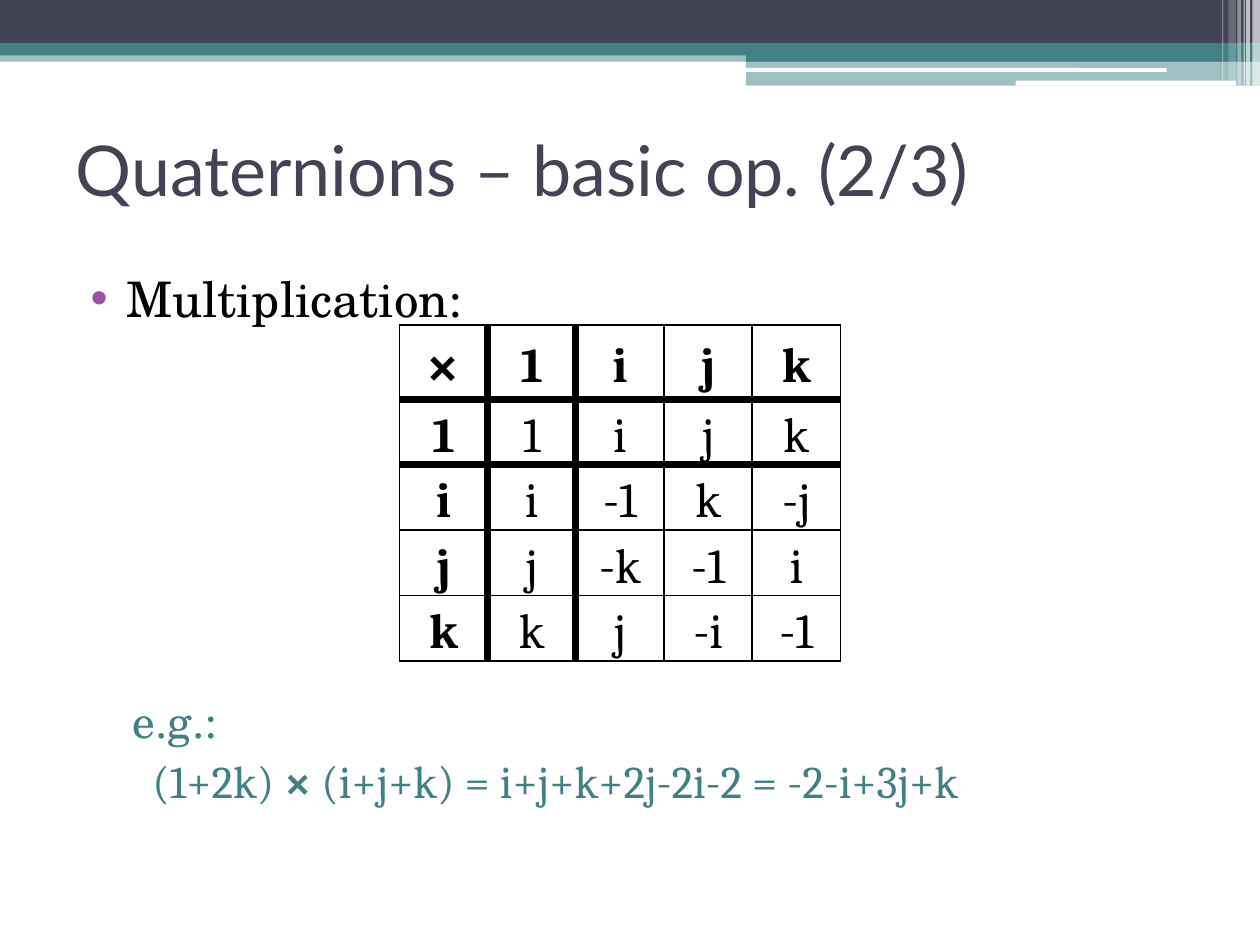
from pptx import Presentation
from pptx.dml.color import RGBColor
from pptx.enum.shapes import MSO_SHAPE
from pptx.enum.text import MSO_ANCHOR, MSO_AUTO_SIZE, PP_ALIGN
from pptx.oxml.ns import qn
from pptx.util import Inches, Pt
from lxml.etree import SubElement

COLORS = {"navy": "424456", "teal": "438086", "white": "FFFFFF",
          "black": "000000", "bullet": "A04DA3"}
THIN, THICK = 1, 4.5


class SlideBuilder:
    """Holds the style and the current slide."""

    def __init__(self, prs):
        self.s = prs.slides.add_slide(prs.slide_layouts[1])

    def band(self, box, color, alpha=100, kind=MSO_SHAPE.RECTANGLE):
        sp = self.s.shapes.add_shape(kind, *map(Inches, box))
        sp.shadow.inherit = False
        sp.line.fill.background()
        sp.fill.solid()
        sp.fill.fore_color.rgb = RGBColor.from_string(COLORS[color])
        if alpha < 100:
            clr = sp.fill._xPr.find(".//" + qn("a:srgbClr"))
            SubElement(clr, qn("a:alpha"), val=str(alpha * 1000))

    def run(self, p, text, color, **font):
        r = p.add_run()
        r.text = text
        r.font.color.rgb = RGBColor.from_string(COLORS[color])
        for name, value in font.items():
            setattr(r.font, name, value)

    def placeholder(self, idx, box, anchor):
        sp = self.s.placeholders[idx]
        for name, value in zip(("left", "top", "width", "height"), box):
            setattr(sp, name, Inches(value))
        tf = sp.text_frame
        for name, value in {"word_wrap": True, "auto_size": MSO_AUTO_SIZE.NONE,
                            "vertical_anchor": anchor}.items():
            setattr(tf, name, value)
        return tf

    def title(self, box, text):
        p = self.placeholder(0, box, MSO_ANCHOR.MIDDLE).paragraphs[0]
        p.alignment = PP_ALIGN.LEFT
        self.run(p, text, "navy", name="Lato", size=Pt(40))

    def body(self, box, lines):
        tf = self.placeholder(1, box, MSO_ANCHOR.TOP)
        for i, (level, indent, before, bullet, runs) in enumerate(lines):
            p = tf.paragraphs[0] if i == 0 else tf.add_paragraph()
            for name, value in {"level": level, "space_before": Pt(before),
                                "space_after": Pt(0), "line_spacing": 1.0}.items():
                setattr(p, name, value)
            pPr = p._p.get_or_add_pPr()
            for name, value in zip(("marL", "indent"), indent):
                pPr.set(name, str(Inches(value)))
            if bullet:
                clr = SubElement(pPr, qn("a:buClr"))
                SubElement(clr, qn("a:srgbClr"), val=COLORS["bullet"])
                SubElement(pPr, qn("a:buChar"), char=bullet)
            else:
                SubElement(pPr, qn("a:buNone"))
            for text, color, font in runs:
                self.run(p, text, color, **font)

    def border(self, cell, side, width):
        ln = SubElement(cell._tc.get_or_add_tcPr(), qn("a:ln" + side),
                        w=str(Pt(width)))
        fill = SubElement(ln, qn("a:solidFill"))
        SubElement(fill, qn("a:srgbClr"), val=COLORS["black"])

    def table(self, box, rows, heights):
        n = len(rows)
        table = self.s.shapes.add_table(n, n, *map(Inches, box)).table
        table.first_row = table.horz_banding = False
        for row, height in zip(table.rows, heights):
            row.height = Inches(height)
        for col in table.columns:
            col.width = Inches(box[2] / n)
        # Heavy rules follow the first two rows and the first two columns
        edges = [THIN, THICK, THICK] + [THIN] * (n - 2)
        for i, row in enumerate(rows):
            for j, text in enumerate(row):
                cell = table.cell(i, j)
                for name, value in {"margin_left": Inches(0.07), "margin_top": 0,
                                    "margin_right": Inches(0.07), "margin_bottom": 0,
                                    "vertical_anchor": MSO_ANCHOR.MIDDLE}.items():
                    setattr(cell, name, value)
                for side, width in zip("LRTB", (edges[j], edges[j + 1],
                                                edges[i], edges[i + 1])):
                    self.border(cell, side, width)
                cell.fill.background()
                p = cell.text_frame.paragraphs[0]
                p.alignment, p.line_spacing = PP_ALIGN.CENTER, 1.15
                self.run(p, text, "black", name="Cambria", bold=i == 0 or j == 0,
                         size=Pt(32 if text == "×" else 28))


def main():
    prs = Presentation()
    prs.slide_width, prs.slide_height = Inches(10), Inches(7.5)
    b = SlideBuilder(prs)

    # Header bands
    b.band((0, 0.4, 10, 0.09), "teal", 50)
    b.band((0, 0, 10, 0.34), "navy")
    b.band((0, 0.34, 10, 0.1), "teal")
    b.band((5.92, 0.39, 4.08, 0.1), "teal")
    b.band((5.92, 0.48, 4.08, 0.2), "teal", 50)
    for box in ((5.91, 0.54, 3.35, 0.03), (8.06, 0.64, 1.75, 0.04)):
        b.band(box, "white", kind=MSO_SHAPE.ROUNDED_RECTANGLE)

    # Translucent stripes at the right edge
    for left, width, height, alpha in (
            (9.94, 0.06, 0.68, 65), (9.89, 0.03, 0.68, 65), (9.87, 0.01, 0.68, 60),
            (9.82, 0.03, 0.68, 40), (9.75, 0.06, 0.64, 20), (9.7, 0.01, 0.64, 30)):
        b.band((left, 0, width, height), "white", alpha)

    # Title and text; the space before "e.g.:" leaves room for the table
    b.title((0.5, 0.75, 9, 1.17), "Quaternions – basic op. (2/3)")
    school = {"name": "TeX Gyre Schola"}
    formula = {"name": "Cambria", "size": Pt(26)}
    b.body((0.5, 2.08, 9, 5.11), [
        (0, (0.4, -0.28), 3, "•",
         [("Multiplication:", "black", {**school, "size": Pt(28)})]),
        (1, (0.72, -0.27), 209, None,
         [("e.g.:", "teal", {**school, "size": Pt(26)})]),
        (1, (0.72, -0.11), 3, None,
         [("(1+2k) ", "teal", formula),
          ("×", "teal", {**formula, "bold": True}),
          (" (i+j+k) = i+j+k+2j-2i-2 = -2-i+3j+k", "teal", formula)]),
    ])

    # Multiplication table
    products = ["× 1 i j k", "1 1 i j k", "i i -1 k -j", "j j -k -1 i", "k k j -i -1"]
    b.table((3.17, 2.58, 3.5, 2.66), [row.split() for row in products],
            [0.58] + [0.52] * 4)

    prs.save("out.pptx")


if __name__ == "__main__":
    main()
